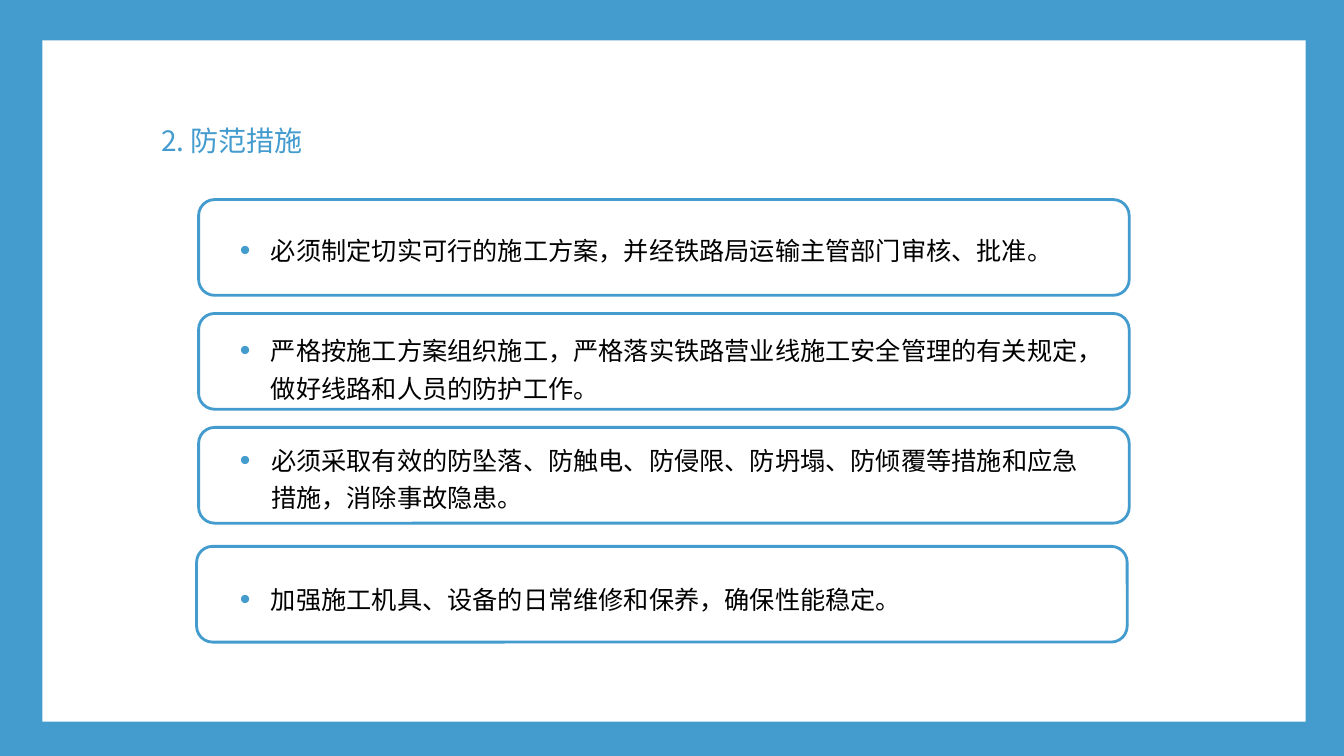
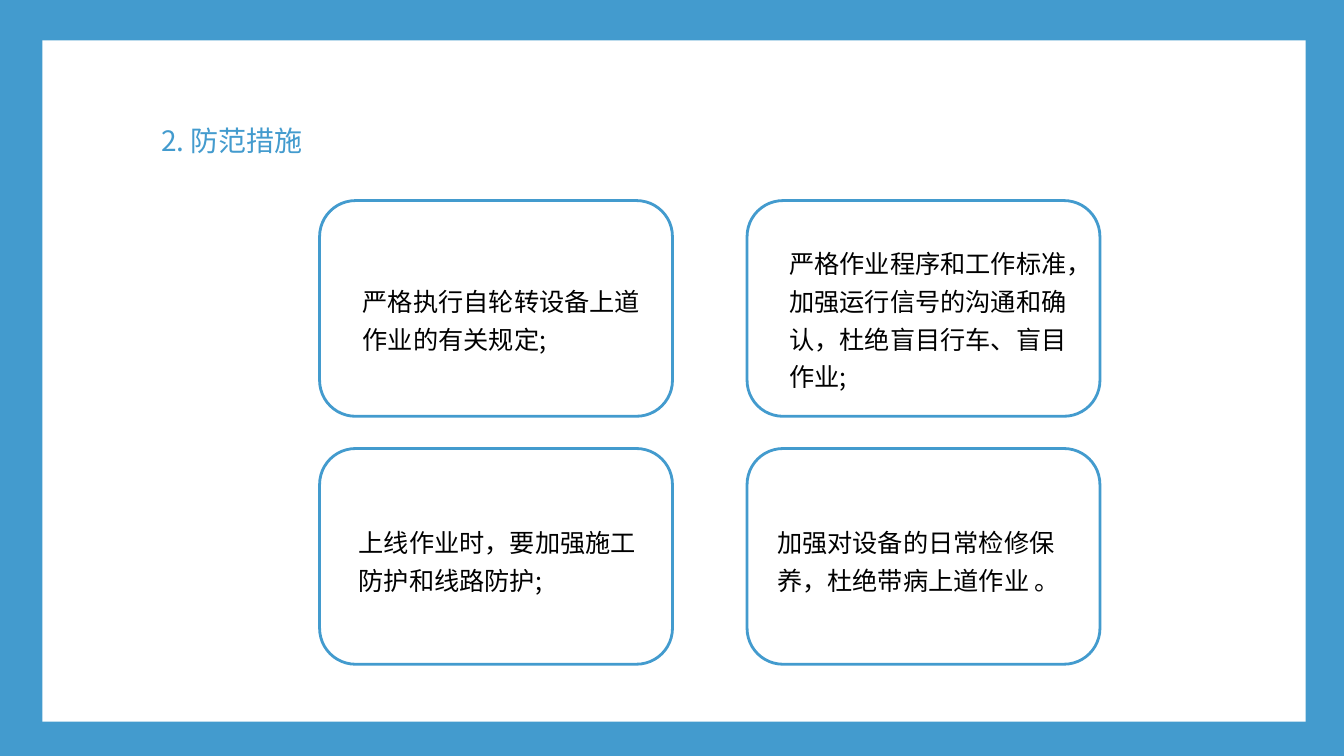
import pptx
import pptx.dml.color
import pptx.enum.shapes
import pptx.enum.text
import pptx.oxml
import pptx.oxml.ns
import pptx.util
from pptx.util import Inches

BLUE, WHITE, BLACK = "439BCE", "FFFFFF", "000000"
FONT = "Noto Sans CJK SC"
TITLE = "2. 防范措施"


def color(hex_value):
    return pptx.dml.color.RGBColor.from_string(hex_value)


def add_xml(parent, tag, **attributes):
    child = pptx.oxml.parse_xml(f"<{tag} {pptx.oxml.ns.nsdecls('a')}/>")
    for key, value in attributes.items():
        child.set(key, value)
    parent.append(child)
    return child


def write(frame, text, size=18, ink=BLACK, spacing=None, bullet=False):
    """Put one formatted paragraph into a text frame."""
    frame.word_wrap = True
    frame.auto_size = pptx.enum.text.MSO_AUTO_SIZE.SHAPE_TO_FIT_TEXT
    paragraph = frame.paragraphs[0]
    if spacing:
        paragraph.line_spacing = spacing
    run = paragraph.add_run()
    run.text = text
    run.font.size = pptx.util.Pt(size)
    run.font.name = FONT
    run.font.color.rgb = color(ink)
    add_xml(run.font._element, "a:ea", typeface=FONT)
    if bullet:
        indent = Inches(0.31)
        properties = paragraph._p.get_or_add_pPr()
        properties.set("marL", str(indent))
        properties.set("indent", str(-indent))
        add_xml(add_xml(properties, "a:buClr"), "a:srgbClr", val=BLUE)
        add_xml(properties, "a:buSzPct", val="120000")
        add_xml(properties, "a:buFont", typeface="Arial")
        add_xml(properties, "a:buChar", char="•")


class Deck:
    """Shared style and the slide being built."""

    def __init__(self):
        self.file = pptx.Presentation()
        self.file.slide_width = Inches(13.33)
        self.file.slide_height = Inches(7.5)
        backdrop = self.file.slide_master.background.fill
        backdrop.solid()
        backdrop.fore_color.rgb = color(BLUE)
        self.slide = None

    def new_slide(self, title):
        self.slide = self.file.slides.add_slide(self.file.slide_layouts[6])
        shapes = self.slide.shapes
        self.box(shapes, "RECTANGLE", (0.42, 0.4, 12.53, 6.76), fill=WHITE)
        self.text(shapes, (1.5, 1.18, 6.67, 0.44), title, size=20, ink=BLUE)

    def box(self, shapes, kind, place, fill=None, outline=None):
        preset = getattr(pptx.enum.shapes.MSO_SHAPE, kind)
        box = shapes.add_shape(preset, *map(Inches, place))
        box.shadow.inherit = False
        if fill:
            box.fill.solid()
            box.fill.fore_color.rgb = color(fill)
        else:
            box.fill.background()
        if outline:
            box.line.color.rgb = color(outline)
            box.line.width = pptx.util.Pt(2)
        else:
            box.line.fill.background()

    def text(self, shapes, place, text, **style):
        write(shapes.add_textbox(*map(Inches, place)).text_frame, text, **style)

    def card(self, frame_place, text_place, text, bullet=False):
        """A rounded outline grouped with its text."""
        shapes = self.slide.shapes.add_group_shape().shapes
        self.box(shapes, "ROUNDED_RECTANGLE", frame_place, outline=BLUE)
        self.text(shapes, text_place, text, spacing=1.25, bullet=bullet)


def main():
    deck = Deck()

    # Slide 1: stacked measures (card left, card top, text top, width, height)
    deck.new_slide(TITLE)
    measures = [
        (1.97, 1.98, 2.21, 8.27, 0.45,
         "必须制定切实可行的施工方案，并经铁路局运输主管部门审核、批准。"),
        (1.97, 3.11, 3.2, 8.56, 0.82,
         "严格按施工方案组织施工，严格落实铁路营业线施工安全管理的有关规定，做好线路和人员的防护工作。"),
        (1.97, 4.24, 4.29, 8.71, 0.82,
         "必须采取有效的防坠落、防触电、防侵限、防坍塌、防倾覆等措施和应急措施，消除事故隐患。"),
        (1.95, 5.42, 5.67, 6.67, 0.45,
         "加强施工机具、设备的日常维修和保养，确保性能稳定。"),
    ]
    for left, top, text_top, width, height, measure in measures:
        deck.card((left, top, 9.23, 0.95), (2.28, text_top, width, height),
                  measure, bullet=True)

    # Slide 2: two-by-two grid (text left, text top, text height)
    deck.new_slide(TITLE)
    rules = [
        (3.5, 2.72, 0.82, "严格执行自轮转设备上道作业的有关规定;"),
        (7.73, 2.34, 1.58,
         "严格作业程序和工作标准，加强运行信号的沟通和确认，杜绝盲目行车、盲目作业;"),
        (3.46, 5.11, 0.82, "上线作业时，要加强施工防护和线路防护;"),
        (7.61, 5.11, 0.82, "加强对设备的日常检修保养，杜绝带病上道作业 。"),
    ]
    for index, (text_left, text_top, height, rule) in enumerate(rules):
        row, column = divmod(index, 2)
        deck.card((3.17 + 4.24 * column, 1.99 + 2.46 * row, 3.5, 2.14),
                  (text_left, text_top, 3.1, height), rule)

    deck.file.save("out.pptx")


if __name__ == "__main__":
    main()
